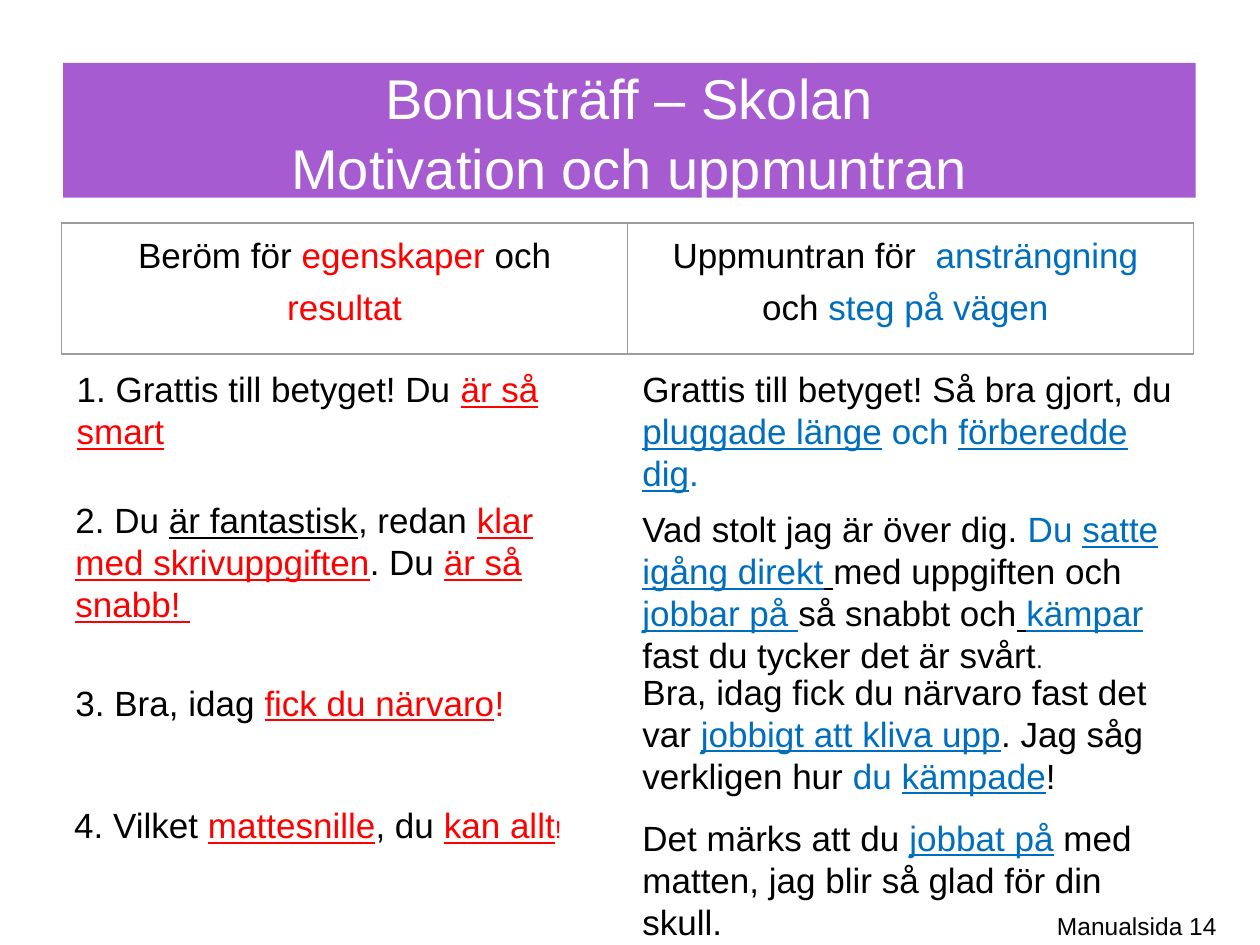
from lxml import etree
from pptx import Presentation
from pptx.dml.color import RGBColor
from pptx.enum.shapes import MSO_SHAPE
from pptx.enum.text import MSO_ANCHOR, PP_ALIGN
from pptx.oxml.ns import qn
from pptx.util import Inches, Pt

RECTANGLE = MSO_SHAPE.RECTANGLE
MIDDLE, TOP = MSO_ANCHOR.MIDDLE, MSO_ANCHOR.TOP
CENTER, LEFT = PP_ALIGN.CENTER, PP_ALIGN.LEFT

PURPLE = RGBColor(0xA7, 0x5B, 0xD1)
WHITE = RGBColor(0xFF, 0xFF, 0xFF)
BLACK = RGBColor(0x00, 0x00, 0x00)
RED = RGBColor(0xFF, 0x00, 0x00)
BLUE = RGBColor(0x00, 0x6E, 0xBF)
GREY = RGBColor(0x9E, 0x9E, 0x9E)


def write(frame, paragraphs, size=20, color=BLACK, align=LEFT, line_spacing=None, gap=0):
    """Fill a frame; each run is (text, colour, underlined, size), all but text optional."""
    frame.word_wrap = True
    for number, runs in enumerate(paragraphs):
        paragraph = frame.add_paragraph() if number else frame.paragraphs[0]
        paragraph.alignment = align
        if line_spacing:
            paragraph.line_spacing = line_spacing
        if number and gap:
            paragraph.space_before = Pt(gap)
        for text, *style in runs:
            run_color, underlined, run_size = style + [color, False, size][len(style):]
            run = paragraph.add_run()
            run.text = text
            run.font.name = "Arial"
            run.font.size = Pt(run_size)
            run.font.color.rgb = run_color
            run.font.underline = underlined


prs = Presentation()
prs.slide_width, prs.slide_height = Inches(10), Inches(7.5)
slide = prs.slides.add_slide(prs.slide_layouts[6])

# Title band
title = slide.shapes.add_shape(RECTANGLE, Inches(0.5), Inches(0.5), Inches(8.99), Inches(1.07))
title.shadow.inherit = False
title.fill.solid()
title.fill.fore_color.rgb = PURPLE
title.line.fill.background()
title_frame = title.text_frame
title_frame.margin_left = title_frame.margin_right = 0
title_frame.margin_top = title_frame.margin_bottom = 0
title_frame.vertical_anchor = MIDDLE
write(title_frame, [[("Bonusträff – Skolan",)], [("Motivation och uppmuntran",)]],
      size=32, color=WHITE, align=CENTER, line_spacing=1.04)

# Column headings
headings = [
    [[("Beröm för ",), ("egenskaper", RED), (" och",)],
     [("resultat", RED)]],
    [[("Uppmuntran för  ",), ("ansträngning ", BLUE)],
     [("och ",), ("steg på vägen ", BLUE)]],
]
table = slide.shapes.add_table(1, 2, Inches(0.49), Inches(1.77), Inches(8.98), Inches(1.04)).table
table.first_row = table.horz_banding = False
table.rows[0].height = Inches(1.04)
for cell, heading in zip(table.rows[0].cells, headings):
    cell.margin_left = cell.margin_right = Inches(0.07)
    cell.margin_top, cell.margin_bottom = Inches(0.21), 0
    cell.vertical_anchor = TOP
    write(cell.text_frame, heading, align=CENTER, line_spacing=Pt(15), gap=15)
    properties = cell._tc.get_or_add_tcPr()
    for side in ("a:lnL", "a:lnR", "a:lnT", "a:lnB"):
        border = etree.SubElement(properties, qn(side), w=str(Pt(0.75)))
        border_fill = etree.SubElement(border, qn("a:solidFill"))
        etree.SubElement(border_fill, qn("a:srgbClr"), val=str(GREY))
    cell.fill.background()

# Praise on the left, encouragement on the right: left, top, width, height, paragraphs
statements = [
    (0.51, 2.87, 4.49, 0.77, [[
        ("1. Grattis till betyget! Du ",), ("är så smart", RED, True)]]),
    (0.5, 3.91, 4.21, 1.11, [[
        ("2. Du ",), ("är fantastisk", BLACK, True), (", redan ",),
        ("klar med skrivuppgiften", RED, True), (". Du ",), ("är så snabb! ", RED, True)]]),
    (0.5, 5.36, 4.49, 0.44, [[
        ("3. Bra, idag ",), ("fick du närvaro", RED, True), ("!", RED)]]),
    (0.49, 6.33, 4.46, 0.44, [[
        ("4. Vilket ",), ("mattesnille", RED, True), (", du ",),
        ("kan allt", RED, True), ("!", RED, False, 14)]]),
    (5, 2.87, 4.52, 1.11, [[
        ("Grattis till betyget! Så bra gjort, du ",), ("pluggade länge", BLUE, True),
        (" och ", BLUE), ("förberedde dig", BLUE, True), (".", BLUE)]]),
    (5, 3.98, 4.52, 1.45, [[
        ("Vad stolt jag är över dig. ",), ("Du ", BLUE), ("satte igång direkt", BLUE, True),
        (" ", BLACK, True), ("med uppgiften och ",), ("jobbar på ", BLUE, True),
        ("så snabbt och",), (" ", BLACK, True), ("kämpar ", BLUE, True),
        ("fast du tycker det är svårt",), (".", BLACK, False, 14)]]),
    (5, 5.27, 4.49, 1.11, [[
        ("Bra, idag fick du närvaro fast det var ",), ("jobbigt att kliva upp", BLUE, True),
        (". Jag såg verkligen hur ",), ("du ", BLUE), ("kämpade", BLUE, True), ("!",)]]),
    (5, 6.43, 4.49, 1.11, [
        [("Det märks att du ",), ("jobbat på", BLUE, True), (" med",)],
        [("matten, jag blir så glad för din skull.",)]]),
]
for left, top, width, height, paragraphs in statements:
    statement = slide.shapes.add_textbox(Inches(left), Inches(top), Inches(width), Inches(height))
    write(statement.text_frame, paragraphs)

# Manual page reference
manual_page = slide.shapes.add_textbox(Inches(8.29), Inches(7.18), Inches(1.68), Inches(0.34))
write(manual_page.text_frame, [[("Manualsida 14",)]], size=14)

prs.save("out.pptx")
